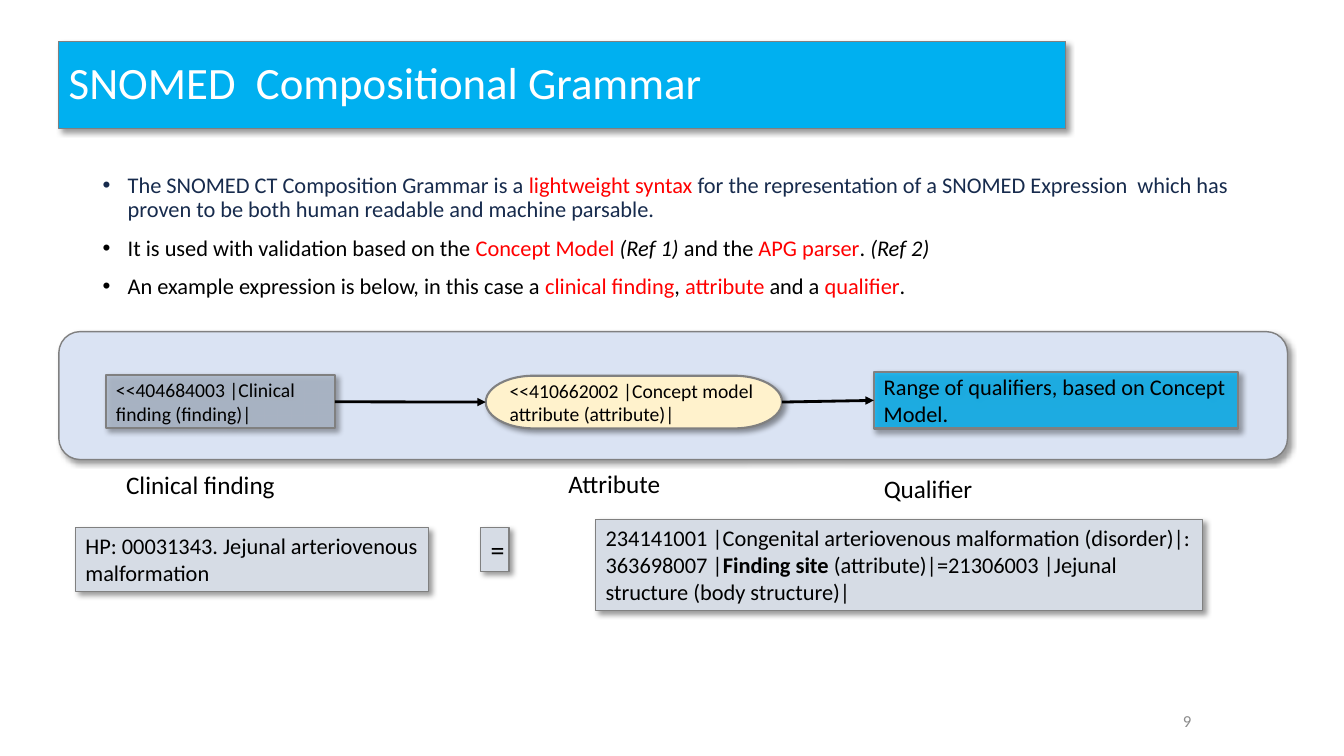
from lxml import etree
from pptx import Presentation
from pptx.dml.color import RGBColor
from pptx.enum.shapes import MSO_CONNECTOR as CONNECTOR, MSO_SHAPE as SHAPE
from pptx.enum.text import MSO_ANCHOR as ANCHOR, MSO_AUTO_SIZE as AUTO_SIZE, PP_ALIGN as ALIGN
from pptx.oxml import parse_xml
from pptx.oxml.ns import nsdecls, qn
from pptx.util import Pt

COLORS = {
    "black": "000000", "white": "FFFFFF", "navy": "172B4D", "red": "FF0000",
    "blue": "00B0F0", "panel": "DAE3F3", "cream": "FFF2CC", "slate": "ADB9CA",
    "pale": "D6DCE5", "outline": "808080", "number": "8C8C8C",
}
SHADOW = (
    f'<a:effectLst {nsdecls("a")}><a:outerShdw blurRad="50800" dist="38100" dir="2700000" '
    'algn="tl" rotWithShape="0"><a:srgbClr val="000000"><a:alpha val="40000"/></a:srgbClr>'
    '</a:outerShdw></a:effectLst>'
)


def write_runs(paragraph, runs, size):
    for text, color, style in runs:
        run = paragraph.add_run()
        run.text = text
        run.font.color.rgb = RGBColor.from_string(COLORS[color])
        formats = {"name": "Calibri", "size": Pt(size),
                   "bold": style == "bold", "italic": style == "italic"}
        for name, value in formats.items():
            setattr(run.font, name, value)


def add_box(kind, bounds, fill, line_width, runs=(), size=16, anchor=ANCHOR.MIDDLE, opacity=100):
    shape = slide.shapes.add_shape(kind, *map(Pt, bounds))
    shape.fill.solid()
    shape.fill.fore_color.rgb = RGBColor.from_string(COLORS[fill])
    if opacity < 100:
        fill_color = shape.fill._xPr.find(qn("a:solidFill"))[0]
        etree.SubElement(fill_color, qn("a:alpha"), val=str(opacity * 1000))
    shape.line.color.rgb = RGBColor.from_string(COLORS["outline"])
    shape.line.width = Pt(line_width)
    shape._element.spPr.append(parse_xml(SHADOW))
    shape.text_frame.word_wrap = True
    shape.text_frame.vertical_anchor = anchor
    paragraph = shape.text_frame.paragraphs[0]
    paragraph.alignment = ALIGN.LEFT
    write_runs(paragraph, runs, size)
    return shape


presentation = Presentation()
presentation.slide_width, presentation.slide_height = Pt(960), Pt(540)
slide = presentation.slides.add_slide(presentation.slide_layouts[6])

title = add_box(SHAPE.RECTANGLE, (42, 29.5, 719.3, 62.6), "blue", 0.75,
                [("SNOMED  Compositional Grammar", "white", "")], 32)
title.text_frame.paragraphs[0].line_spacing = 0.9

bullets = [
    [("The SNOMED CT Composition Grammar is a ", "navy", ""),
     ("lightweight syntax ", "red", ""),
     ("for the representation of a SNOMED Expression  which has proven to be both "
      "human readable and machine parsable.", "navy", "")],
    [("It is used with validation based on the ", "black", ""),
     ("Concept Model ", "red", ""), ("(Ref 1) ", "black", "italic"),
     ("and the ", "black", ""), ("APG parser", "red", ""),
     (". ", "black", ""), ("(Ref 2)", "black", "italic")],
    [("An example expression is below, in this case a ", "black", ""),
     ("clinical finding", "red", ""), (", ", "black", ""),
     ("attribute", "red", ""), (" and a ", "black", ""),
     ("qualifier", "red", ""), (".", "black", "")],
]
body = slide.shapes.add_textbox(Pt(66.2), Pt(121), Pt(828), Pt(113))
body.text_frame.word_wrap = True
for index, runs in enumerate(bullets):
    paragraph = body.text_frame.add_paragraph() if index else body.text_frame.paragraphs[0]
    paragraph.line_spacing = 0.9
    paragraph.space_before = Pt(10)
    properties = paragraph._p.get_or_add_pPr()
    properties.set("marL", str(Pt(18)))
    properties.set("indent", str(-Pt(18)))
    etree.SubElement(properties, qn("a:buFont"), typeface="Arial")
    etree.SubElement(properties, qn("a:buChar"), char="•")
    write_runs(paragraph, runs, 16)

add_box(SHAPE.ROUNDED_RECTANGLE, (42, 236.9, 877.7, 91.4), "panel", 1)
attribute = add_box(SHAPE.FLOWCHART_TERMINATOR, (347, 268.4, 211.7, 37.6), "cream", 1.5,
                    [("<<410662002 |Concept model attribute (attribute)|", "black", "")], 14)
qualifier = add_box(SHAPE.RECTANGLE, (624.2, 265.8, 260, 40.4), "blue", 1.75,
                    [("Range of qualifiers, based on Concept Model.", "black", "")], opacity=80)
finding = add_box(SHAPE.RECTANGLE, (75.8, 268, 163.4, 38), "slate", 1.5,
                  [("<<404684003 |Clinical finding (finding)|", "black", "")], 14, opacity=80)

for start, end in [(attribute, qualifier), (finding, attribute)]:
    arrow = slide.shapes.add_connector(CONNECTOR.STRAIGHT, 0, 0, 0, 0)
    arrow.begin_connect(start, 3)
    arrow.end_connect(end, 1)
    arrow.line.color.rgb = RGBColor.from_string(COLORS["black"])
    arrow.line.width = Pt(2)
    etree.SubElement(arrow.line._get_or_add_ln(), qn("a:tailEnd"), type="triangle")
    etree.SubElement(arrow._element.spPr, qn("a:effectLst"))

expression = [
    ("234141001 |Congenital arteriovenous malformation (disorder)|: 363698007 |", "black", ""),
    ("Finding site ", "black", "bold"),
    ("(attribute)|=21306003 |Jejunal structure (body structure)|", "black", ""),
]
term = [("HP: 00031343. Jejunal arteriovenous malformation", "black", "")]
for bounds, runs, size in [
    ((425.5, 370.8, 433.4, 65.5), expression, 16),
    ((54, 376.6, 252, 46), term, 16),
    ((343.4, 376.6, 20.2, 31.5), [("=", "black", "")], 20),
]:
    add_box(SHAPE.RECTANGLE, bounds, "pale", 0.75, runs, size, ANCHOR.TOP)

number = slide.shapes.add_textbox(Pt(642.2), Pt(500.4), Pt(216), Pt(28.8))
number.text_frame.word_wrap = True
number.text_frame.vertical_anchor = ANCHOR.MIDDLE
number.text_frame.paragraphs[0].alignment = ALIGN.RIGHT
write_runs(number.text_frame.paragraphs[0], [("9", "number", "")], 12)

for text, left, top, width in [
    ("Clinical finding", 83, 332, 122),
    ("Attribute", 399, 330.6, 81.4),
    ("Qualifier", 624.2, 334.4, 78.5),
]:
    label = slide.shapes.add_textbox(Pt(left), Pt(top), Pt(width), Pt(29))
    label.text_frame.word_wrap = False
    label.text_frame.auto_size = AUTO_SIZE.SHAPE_TO_FIT_TEXT
    write_runs(label.text_frame.paragraphs[0], [(text, "black", "")], 18)

presentation.save("out.pptx")
